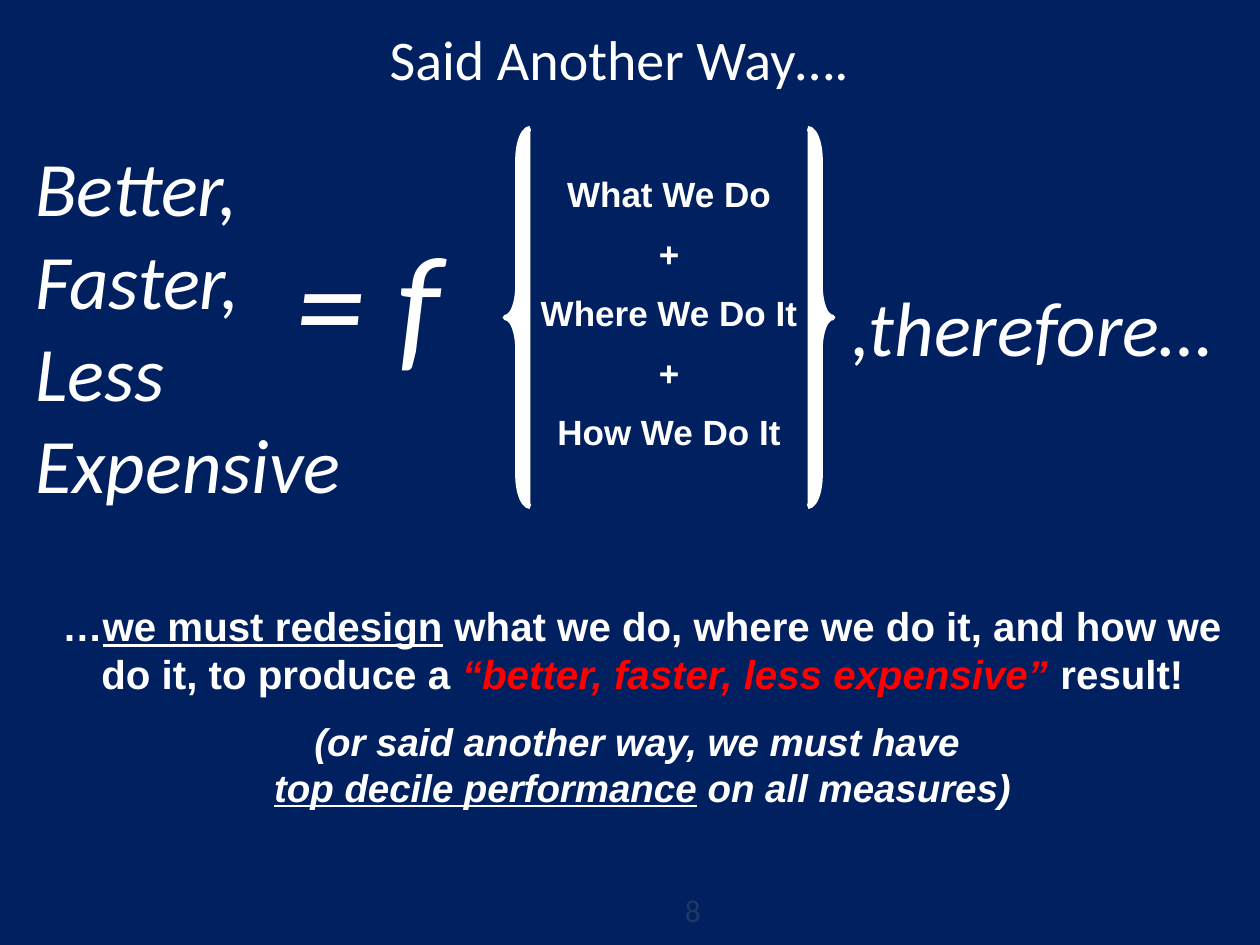
from lxml.etree import SubElement
from pptx import Presentation
from pptx.dml.color import RGBColor
from pptx.enum.shapes import MSO_SHAPE
from pptx.enum.text import MSO_ANCHOR, PP_ALIGN
from pptx.oxml.ns import qn
from pptx.util import Inches, Pt

COLORS = {"navy": "002060", "white": "FFFFFF", "red": "FF0000", "number": "1F3864"}


def color(name):
    return RGBColor.from_string(COLORS[name])


def add_run(paragraph, text, size, font="Arial", fill="white", bold=False, italic=False, underline=False):
    run = paragraph.add_run()
    run.text = text
    run.font.name = font
    run.font.size = Pt(size)
    run.font.color.rgb = color(fill)
    run.font.bold = bold
    run.font.italic = italic
    run.font.underline = underline


def add_text(slide, box, paragraphs, align=PP_ALIGN.LEFT, gap=0, **style):
    """Add a text box; a paragraph is a list of (text, style changes), "\n" being a line break."""
    frame = slide.shapes.add_textbox(*map(Inches, box)).text_frame
    frame.word_wrap = True
    for index, runs in enumerate(paragraphs):
        paragraph = frame.add_paragraph() if index else frame.paragraphs[0]
        paragraph.alignment = align
        paragraph.space_before = Pt(gap if index else 0)
        for text, changes in runs:
            if text == "\n":
                paragraph.add_line_break()
            else:
                add_run(paragraph, text, **{**style, **changes})
    return frame


def add_tab_stop(paragraph, position):
    properties = paragraph._p.get_or_add_pPr()
    tab_list = SubElement(properties, qn("a:tabLst"))
    SubElement(tab_list, qn("a:tab"), pos=str(Inches(position)), algn="l")


def add_title(slide, box):
    title = slide.shapes.title
    title.left, title.top, title.width, title.height = map(Inches, box)
    frame = title.text_frame
    frame.margin_left = frame.margin_right = frame.margin_top = frame.margin_bottom = 0
    frame.vertical_anchor = MSO_ANCHOR.MIDDLE
    paragraph = frame.paragraphs[0]
    paragraph.alignment = PP_ALIGN.CENTER
    paragraph.line_spacing = 0.85
    add_run(paragraph, "Said Another Way….", 32, "Calibri")


def add_brace(slide, preset, left, top):
    brace = slide.shapes.add_shape(preset, Inches(left), Inches(top), Inches(0.2), Inches(3))
    brace.adjustments[0] = 1.25
    brace.shadow.inherit = False
    brace.fill.solid()
    brace.fill.fore_color.rgb = color("white")
    brace.line.color.rgb = color("white")
    brace.line.width = Pt(3)


def add_equation(slide, left, top):
    """Outcomes = f{what, where, how}, therefore…"""
    formula = {"font": "Calibri", "italic": True}
    factors = ["What We Do", "+", "Where We Do It", "+", "How We Do It"]
    add_text(slide, (left + 3.78, top + 0.3, 2.7, 2.43), [[(text, {})] for text in factors],
             PP_ALIGN.CENTER, gap=10, size=20, bold=True)
    add_brace(slide, MSO_SHAPE.LEFT_BRACE, left + 3.83, top)
    add_brace(slide, MSO_SHAPE.RIGHT_BRACE, left + 6.23, top)
    function = add_text(slide, (left + 1.03, top + 0.63, 3.55, 1.45), [[("\t= f", {})]],
                        size=80, **formula)
    add_tab_stop(function.paragraphs[0], 1.04)
    outcomes = ["Better,", "Faster,", "Less Expensive"]
    add_text(slide, (left, top + 0.04, 3.55, 3.06), [[(text, {})] for text in outcomes],
             size=44, **formula)
    add_text(slide, (left + 6.48, top + 1.15, 3.55, 0.84), [[(",therefore…", {})]], size=44, **formula)


def add_conclusion(slide, box):
    aside = {"size": 22, "italic": True}
    paragraphs = [
        [("…", {}),
         ("we must redesign", {"underline": True}),
         (" what we do, where we do it, and how we do it, to produce a ", {}),
         ("“better, faster, less expensive” ", {"fill": "red", "italic": True}),
         ("result!", {})],
        [("(or said another way, we must have ", aside),
         ("\n", {}),
         ("top decile performance", {**aside, "underline": True}),
         (" on all measures)", aside)],
    ]
    add_text(slide, box, paragraphs, PP_ALIGN.CENTER, gap=11.5, size=23, bold=True)


def add_slide_number(slide, box):
    add_text(slide, box, [[("8", {})]], PP_ALIGN.CENTER, size=18, font="Calibri", fill="number")


def main():
    presentation = Presentation()
    presentation.slide_width = Inches(10)
    presentation.slide_height = Inches(7.5)
    slide = presentation.slides.add_slide(presentation.slide_layouts[5])
    slide.background.fill.solid()
    slide.background.fill.fore_color.rgb = color("navy")
    add_title(slide, (-0.23, 0.27, 10.29, 0.46))
    add_equation(slide, 0.18, 1.02)
    add_conclusion(slide, (0.2, 4.72, 9.8, 1.8))
    add_slide_number(slide, (5, 7.02, 1, 0.4))
    presentation.save("out.pptx")


if __name__ == "__main__":
    main()
